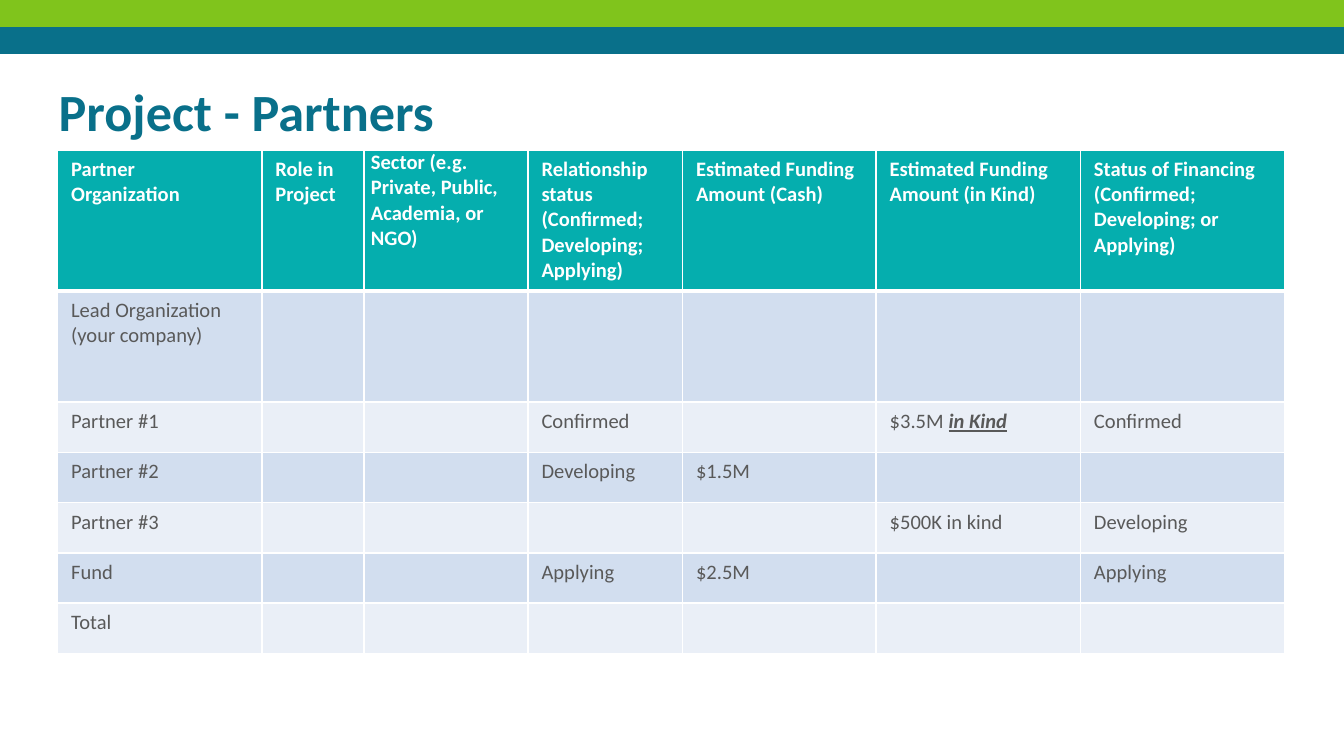
"""Build the project partners slide with its funding table."""
from dataclasses import dataclass

from lxml.etree import SubElement
from pptx import Presentation
from pptx.dml.color import RGBColor
from pptx.enum.shapes import MSO_SHAPE as Shape
from pptx.enum.text import MSO_ANCHOR as Anchor, PP_ALIGN as Align
from pptx.oxml.ns import qn
from pptx.slide import Slide
from pptx.table import _Cell as Cell
from pptx.text.text import _Paragraph as Paragraph
from pptx.util import Cm, Pt

FONT = "Calibri"
BLUE, GREEN, TEAL = "09708A", "80C41C", "05AEAE"
WHITE, GRAY = "FFFFFF", "595959"
BANDS = ("D2DEEF", "EAEFF7")
TEXT_SIZE = 11
BAR_HEIGHT = 0.51
HEADER_HEIGHT, LEAD_HEIGHT, ROW_HEIGHT = 2.67, 2.1, 0.95


@dataclass
class Column:
    heading: str
    width: float


@dataclass
class Partner:
    name: str
    relationship: str = ""
    cash: str = ""
    in_kind: str = ""
    in_kind_note: str = ""
    financing: str = ""


COLUMNS = [
    Column("Partner Organization", 3.86),
    Column("Role in Project", 1.93),
    Column("Sector (e.g. Private, Public, Academia, or NGO)", 3.1),
    Column("Relationship status\n(Confirmed; Developing; Applying)", 2.92),
    Column("Estimated Funding Amount (Cash)", 3.66),
    Column("Estimated Funding Amount (in Kind)", 3.86),
    Column("Status of Financing\n(Confirmed; Developing; or Applying)", 3.86),
]
SECTOR = 2
IN_KIND = 5
PARTNERS = [
    Partner("Lead Organization\n(your company)"),
    Partner("Partner #1", relationship="Confirmed", in_kind="$3.5M ",
            in_kind_note="in Kind", financing="Confirmed"),
    Partner("Partner #2", relationship="Developing", cash="$1.5M"),
    Partner("Partner #3", in_kind="$500K in kind", financing="Developing"),
    Partner("Fund", relationship="Applying", cash="$2.5M", financing="Applying"),
    Partner("Total"),
]


def color(code: str) -> RGBColor:
    return RGBColor.from_string(code)


def add_span(para: Paragraph, text: str, *, size: float = TEXT_SIZE, ink: str = GRAY,
             bold: bool = False, italic: bool = False, underline: bool = False) -> None:
    span = para.add_run()
    span.text = text
    font = span.font
    font.name, font.size = FONT, Pt(size)
    font.bold, font.italic, font.underline = bold, italic, underline
    font.color.rgb = color(ink)


def add_bar(slide: Slide, top: float, width: int, fill: str) -> None:
    bar = slide.shapes.add_shape(Shape.RECTANGLE, 0, Cm(top), width, Cm(BAR_HEIGHT))
    bar.shadow.inherit = False
    bar.fill.solid()
    bar.fill.fore_color.rgb = color(fill)
    bar.line.fill.background()


def style_cell(cell: Cell, fill: str, top: float = 1, bottom: float = 1) -> None:
    properties = cell._tc.get_or_add_tcPr()
    for side, width in (("L", 1), ("R", 1), ("T", top), ("B", bottom)):
        border = SubElement(properties, qn(f"a:ln{side}"), w=str(Pt(width)))
        paint = SubElement(border, qn("a:solidFill"))
        SubElement(paint, qn("a:srgbClr"), val=WHITE)
    cell.fill.solid()
    cell.fill.fore_color.rgb = color(fill)


def write_cell(cell: Cell, text: str, ink: str = GRAY, bold: bool = False) -> None:
    frame = cell.text_frame
    for index, line in enumerate(text.split("\n")):
        para = frame.add_paragraph() if index else frame.paragraphs[0]
        if line:
            add_span(para, line, ink=ink, bold=bold)
        else:
            SubElement(para._p, qn("a:endParaRPr"), sz=str(TEXT_SIZE * 100))


def add_title(slide: Slide, text: str) -> None:
    box = slide.shapes.title
    box.left, box.top, box.width, box.height = Cm(0.86), Cm(1.24), Cm(23.67), Cm(1.6)
    frame = box.text_frame
    frame.word_wrap = True
    frame.vertical_anchor = Anchor.TOP
    frame.margin_left = frame.margin_right = Cm(0.25)
    frame.margin_top = frame.margin_bottom = Cm(0.25)
    para = frame.paragraphs[0]
    para.alignment = Align.LEFT
    add_span(para, text, size=28, ink=BLUE, bold=True)


def add_partner_table(slide: Slide) -> None:
    heights = [HEADER_HEIGHT, LEAD_HEIGHT] + [ROW_HEIGHT] * (len(PARTNERS) - 1)
    width = sum(column.width for column in COLUMNS)
    table = slide.shapes.add_table(len(heights), len(COLUMNS), Cm(1.09), Cm(2.83),
                                   Cm(width), Cm(sum(heights))).table
    for row, height in zip(table.rows, heights):
        row.height = Cm(height)
    for index, column in enumerate(COLUMNS):
        table.columns[index].width = Cm(column.width)
        heading = table.cell(0, index)
        style_cell(heading, TEAL, bottom=3)
        write_cell(heading, column.heading, WHITE, bold=True)
    sector = table.cell(0, SECTOR)
    sector.margin_left = sector.margin_right = Cm(0.13)
    sector.margin_top = sector.margin_bottom = 0

    for number, partner in enumerate(PARTNERS, start=1):
        values = (partner.name, "", "", partner.relationship, partner.cash,
                  partner.in_kind, partner.financing)
        for index, value in enumerate(values):
            cell = table.cell(number, index)
            style_cell(cell, BANDS[(number - 1) % 2], top=3 if number == 1 else 1)
            write_cell(cell, value)
        if partner.in_kind_note:
            para = table.cell(number, IN_KIND).text_frame.paragraphs[0]
            add_span(para, partner.in_kind_note, bold=True, italic=True, underline=True)


def main() -> None:
    deck = Presentation()
    deck.slide_width, deck.slide_height = Cm(25.4), Cm(14.29)
    page = deck.slides.add_slide(deck.slide_layouts[5])
    add_bar(page, BAR_HEIGHT, deck.slide_width, BLUE)
    add_bar(page, 0, deck.slide_width, GREEN)
    add_title(page, "Project - Partners")
    add_partner_table(page)
    deck.save("out.pptx")


if __name__ == "__main__":
    main()
